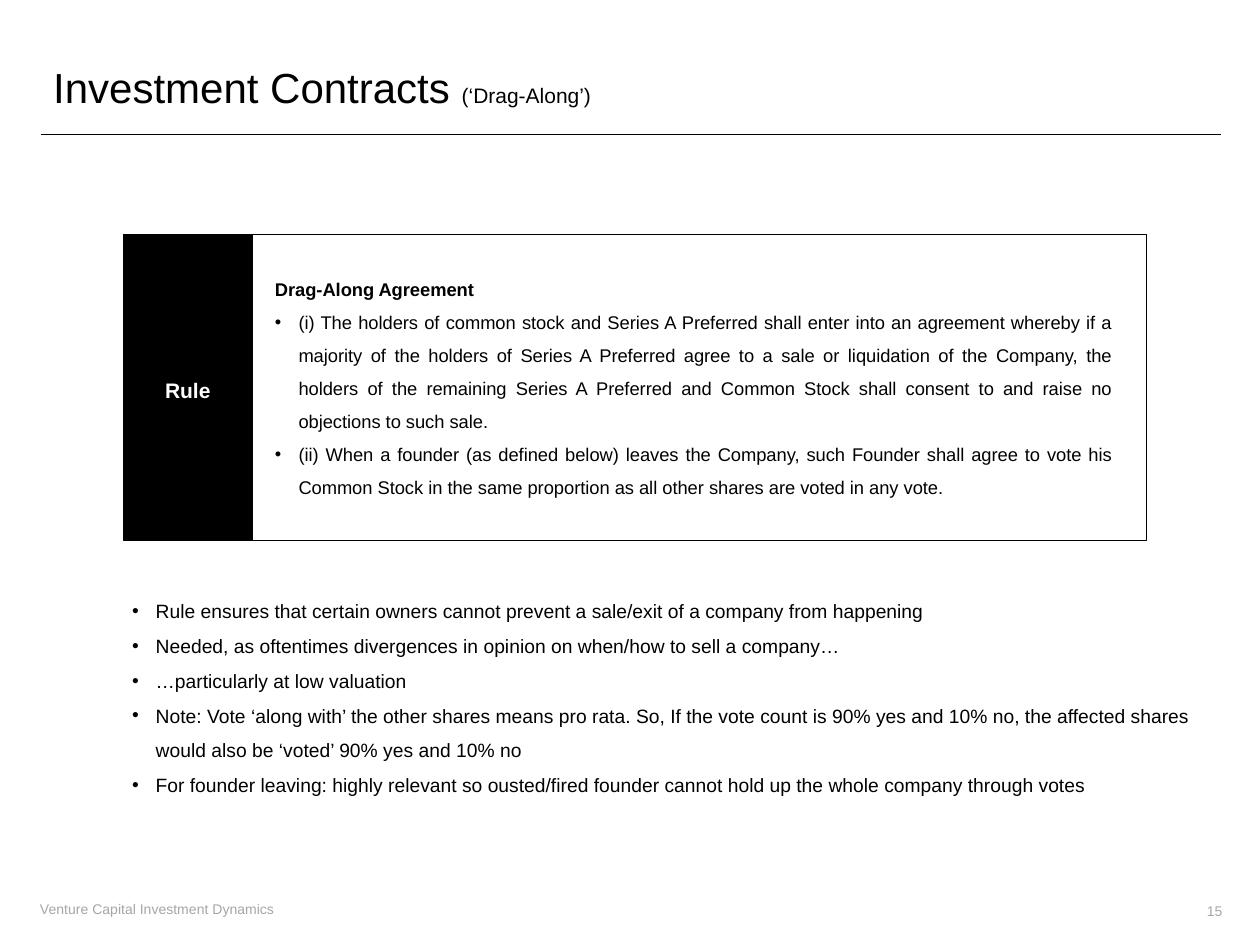
"""Build the drag-along slide on investment contracts."""
from lxml.etree import SubElement
from pptx import Presentation
from pptx.dml.color import RGBColor
from pptx.enum.shapes import MSO_CONNECTOR, MSO_SHAPE
from pptx.enum.text import MSO_ANCHOR, PP_ALIGN
from pptx.oxml.ns import qn
from pptx.util import Pt

FONT = "Arial"
COLORS = {"black": "000000", "white": "FFFFFF", "grey": "A6A6A6"}
BULLET_INDENT = 13.5

TITLE = "Investment Contracts "
SUBTITLE = "(‘Drag-Along’)"
FOOTER = "Venture Capital Investment Dynamics"
PAGE_NUMBER = "15"
RULE_LABEL = "Rule"
RULE_HEADING = "Drag-Along Agreement "
RULE_CLAUSES = [
    "(i) The holders of common stock and Series A Preferred shall enter into an agreement "
    "whereby if a majority of the holders of Series A Preferred agree to a sale or liquidation "
    "of the Company, the holders of the remaining Series A Preferred and Common Stock shall "
    "consent to and raise no objections to such sale.",
    "(ii) When a founder (as defined below) leaves the Company, such Founder shall agree to "
    "vote his Common Stock in the same proportion as all other shares are voted in any vote.",
]
COMMENTS = [
    "Rule ensures that certain owners cannot prevent a sale/exit of a company from happening",
    "Needed, as oftentimes divergences in opinion on when/how to sell a company…",
    "…particularly at low valuation",
    "Note: Vote ‘along with’ the other shares means pro rata. So, If the vote count is 90% yes "
    "and 10% no, the affected shares would also be ‘voted’ 90% yes and 10% no",
    "For founder leaving: highly relevant so ousted/fired founder cannot hold up the whole "
    "company through votes",
]


def color(name):
    return RGBColor.from_string(COLORS[name])


def style_run(run, size, color_name="black", bold=False):
    run.font.name = FONT
    run.font.size = Pt(size)
    run.font.bold = bold
    run.font.color.rgb = color(color_name)


def add_text(slide, box, lines, size, color_name="black", align=PP_ALIGN.LEFT,
             anchor=MSO_ANCHOR.TOP, spacing=None):
    text_frame = slide.shapes.add_textbox(*map(Pt, box)).text_frame
    text_frame.word_wrap = True
    text_frame.vertical_anchor = anchor
    text_frame.text = "\n".join(lines)
    for paragraph in text_frame.paragraphs:
        paragraph.alignment = align
        paragraph.line_spacing = spacing
        style_run(paragraph.runs[0], size, color_name)
    return text_frame.paragraphs


def add_bullets(paragraphs):
    for paragraph in paragraphs:
        properties = paragraph._p.get_or_add_pPr()
        properties.set("marL", str(Pt(BULLET_INDENT)))
        properties.set("indent", str(-Pt(BULLET_INDENT)))
        SubElement(properties, qn("a:buFont")).set("typeface", FONT)
        SubElement(properties, qn("a:buChar")).set("char", "•")


def add_rectangle(slide, box, fill=None):
    shape = slide.shapes.add_shape(MSO_SHAPE.RECTANGLE, *map(Pt, box))
    shape.shadow.inherit = False
    if fill:
        shape.fill.solid()
        shape.fill.fore_color.rgb = color(fill)
    else:
        shape.fill.background()
    shape.line.color.rgb = color("black")
    shape.line.width = Pt(0.5)


def add_title_line(slide):
    line = slide.shapes.add_connector(MSO_CONNECTOR.STRAIGHT, Pt(23.3), Pt(77), Pt(697.7), Pt(77))
    line.line.color.rgb = color("black")
    line.line.width = Pt(0.75)
    SubElement(line._element.spPr, qn("a:effectLst"))


def main():
    presentation = Presentation()
    presentation.slide_width, presentation.slide_height = Pt(720), Pt(540)
    slide = presentation.slides.add_slide(presentation.slide_layouts[6])

    add_title_line(slide)
    add_text(slide, (15.8, 511, 198.7, 17.3), [FOOTER], 8, "grey")
    title = add_text(slide, (23.3, 24.5, 546.5, 50.4), [TITLE], 24, anchor=MSO_ANCHOR.MIDDLE)[0]
    subtitle = title.add_run()
    subtitle.text = SUBTITLE
    style_run(subtitle, 12)
    add_text(slide, (679, 506.2, 26.6, 28.8), [PAGE_NUMBER], 8, "grey",
             PP_ALIGN.RIGHT, MSO_ANCHOR.MIDDLE)

    add_rectangle(slide, (70.6, 134, 73.4, 175), "black")
    label = add_text(slide, (72, 212.4, 70.6, 21.6), [RULE_LABEL], 12, "white", PP_ALIGN.CENTER)[0]
    label.runs[0].font.bold = True
    heading, *clauses = add_text(slide, (150, 149, 493.2, 138.2), [RULE_HEADING, *RULE_CLAUSES],
                                 10.5, align=PP_ALIGN.JUSTIFY, spacing=1.5)
    heading.runs[0].font.bold = True
    add_bullets(clauses)
    add_rectangle(slide, (88.6, 134, 566.6, 175))

    add_bullets(add_text(slide, (68.4, 332.6, 623.5, 124.6), COMMENTS, 11, spacing=1.5))
    presentation.save("out.pptx")


if __name__ == "__main__":
    main()
